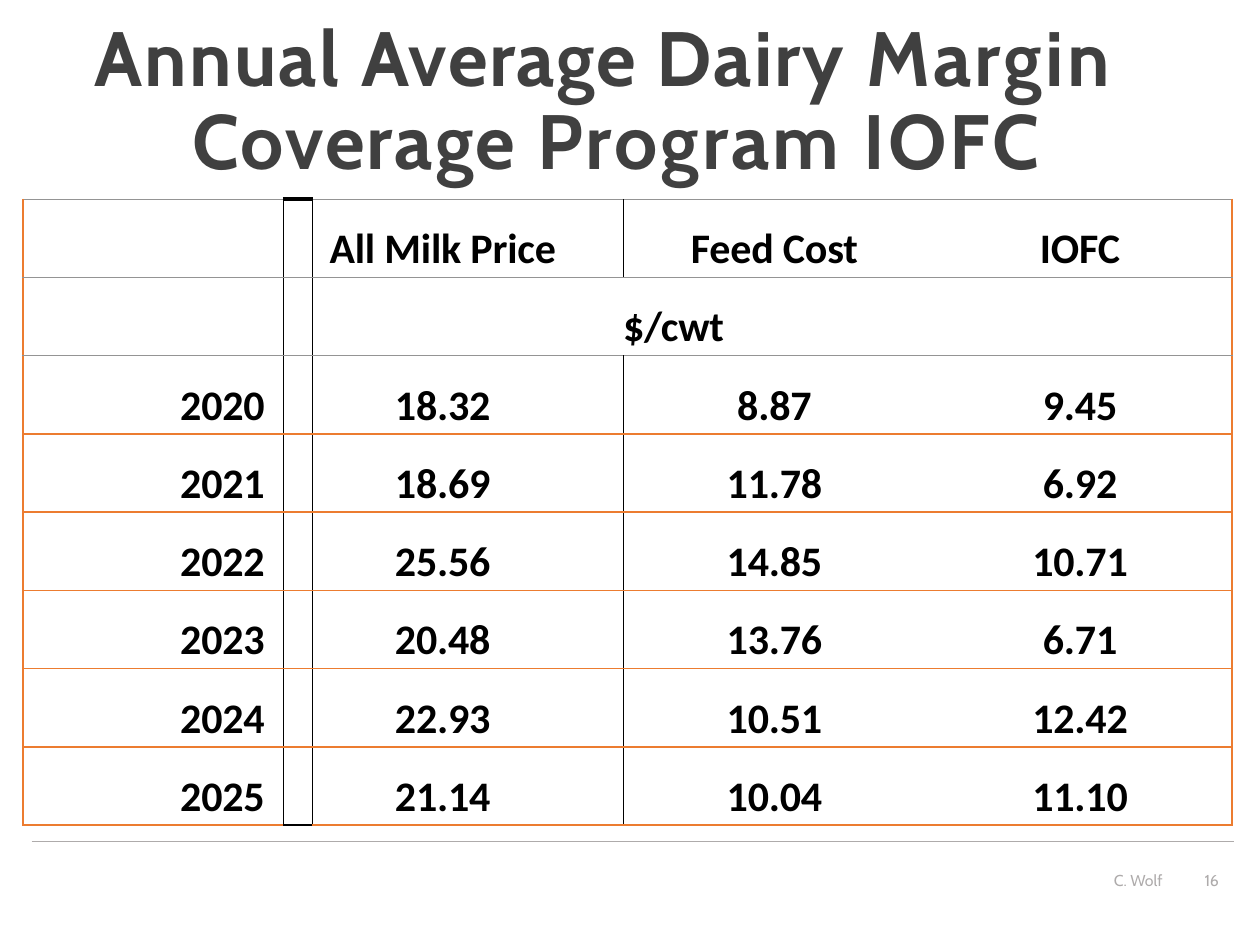
import pptx
import pptx.dml.color
import pptx.enum.shapes
import pptx.enum.text
import pptx.oxml
import pptx.oxml.ns
import pptx.util

Pt = pptx.util.Pt
ALIGN = pptx.enum.text.PP_ALIGN
COLORS = {"title": "404040", "footer": "AEABAB", "text": "000000",
          "orange": "EC7C30", "gray": "949494"}

# Each title word carries its own letter spacing, in points.
TITLE = [("Annual ", 1.3), ("Average ", 0.9), ("Dairy ", 1.2), ("Margin ", 1.9),
         ("Coverage ", 1.2), ("Program ", 1.8), ("IOFC", 1.6)]
UNIT = "$/cwt"
ROWS = [
    ("", "", "All Milk Price", "Feed Cost", "IOFC"),
    ("", "", UNIT, "", ""),
    ("2020", "", "18.32", "8.87", "9.45"),
    ("2021", "", "18.69", "11.78", "6.92"),
    ("2022", "", "25.56", "14.85", "10.71"),
    ("2023", "", "20.48", "13.76", "6.71"),
    ("2024", "", "22.93", "10.51", "12.42"),
    ("2025", "", "21.14", "10.04", "11.10"),
]
UNIT_ROW, SPACER, PRICE = 1, 1, 2
COLUMN_WIDTHS = [149.04, 16.56, 177.84, 184.32, 163.44]
RIGHT_MARGINS = [10.8, 0, 29, 12, 10.5]
UNIT_RIGHT_MARGIN = 113
ROW_HEIGHT = 44.73
FOOTERS = [("C. Wolf", 636.5, 40, 0), ("16", 688.3, 18, -0.2)]

TITLE_FONT = {"name": "Cabin", "size": Pt(44), "bold": True}
TABLE_FONT = {"name": "Calibri", "size": Pt(24), "bold": True}
FOOTER_FONT = {"name": "Cabin", "size": Pt(9), "bold": False}
NO_MARGINS = {"margin_left": 0, "margin_right": 0, "margin_top": 0, "margin_bottom": 0}


def set_values(target, values):
    for name, value in values.items():
        setattr(target, name, value)


def add_run(paragraph, text, font, color, spacing=0):
    """Add a run; spacing is the letter spacing in points."""
    run = paragraph.add_run()
    run.text = text
    set_values(run.font, font)
    run.font.color.rgb = pptx.dml.color.RGBColor.from_string(COLORS[color])
    if spacing:
        run.font._element.set("spc", str(round(spacing * 100)))


def add_title(slide):
    title = slide.shapes.title
    set_values(title, {"left": Pt(53.3), "top": Pt(3.6), "width": Pt(628.5), "height": Pt(102.2)})
    frame = title.text_frame
    set_values(frame, {**NO_MARGINS, "margin_top": Pt(7), "word_wrap": True,
                       "auto_size": pptx.enum.text.MSO_AUTO_SIZE.NONE,
                       "vertical_anchor": pptx.enum.text.MSO_ANCHOR.TOP})
    paragraph = frame.paragraphs[0]
    set_values(paragraph, {"alignment": ALIGN.LEFT, "line_spacing": Pt(47.5),
                           "space_before": Pt(0)})
    properties = paragraph._p.get_or_add_pPr()
    properties.set("marL", str(Pt(56.9)))
    properties.set("indent", str(Pt(-56.2)))
    for word, spacing in TITLE:
        add_run(paragraph, word, TITLE_FONT, "title", spacing)


def horizontal_rule(edge, column):
    """Return colour and width of the rule above row number edge."""
    if column == SPACER and edge == 0:
        return "text", 2.25
    if column == SPACER and edge == len(ROWS):
        return "text", 1
    return ("gray", 0.5) if edge <= UNIT_ROW + 1 else ("orange", 1)


def vertical_rule(edge, row):
    """Return colour and width of the rule left of column number edge, or None."""
    if edge in (0, len(COLUMN_WIDTHS)):
        return "orange", 1
    if edge in (SPACER, PRICE) or (edge == PRICE + 1 and row != UNIT_ROW):
        return "text", 1
    return None


def set_border(cell, side, rule):
    color, width = rule or (None, 0)
    fill = (f'<a:solidFill><a:srgbClr val="{COLORS[color]}"/></a:solidFill>'
            if color else "<a:noFill/>")
    cell._tc.get_or_add_tcPr().append(pptx.oxml.parse_xml(
        f'<a:ln{side} {pptx.oxml.ns.nsdecls("a")} w="{Pt(width)}">{fill}</a:ln{side}>'))


def add_table(slide):
    table = slide.shapes.add_table(
        len(ROWS), len(COLUMN_WIDTHS), Pt(13), Pt(113.8),
        Pt(sum(COLUMN_WIDTHS)), Pt(ROW_HEIGHT * len(ROWS))).table
    set_values(table, {"first_row": False, "horz_banding": False})
    for column, width in zip(table.columns, COLUMN_WIDTHS):
        column.width = Pt(width)
    for row in table.rows:
        row.height = Pt(ROW_HEIGHT)
    table.cell(UNIT_ROW, PRICE).merge(table.cell(UNIT_ROW, len(COLUMN_WIDTHS) - 1))

    for row, texts in enumerate(ROWS):
        for column, text in enumerate(texts):
            cell = table.cell(row, column)
            margin = UNIT_RIGHT_MARGIN if text == UNIT else RIGHT_MARGINS[column]
            set_values(cell, {**NO_MARGINS, "margin_top": Pt(14.1), "margin_right": Pt(margin)})
            right_edge = len(COLUMN_WIDTHS) if text == UNIT else column + 1
            for side, rule in (("L", vertical_rule(column, row)),
                               ("R", vertical_rule(right_edge, row)),
                               ("T", horizontal_rule(row, column)),
                               ("B", horizontal_rule(row + 1, column))):
                set_border(cell, side, rule)
            cell.fill.background()
            if text:
                paragraph = cell.text_frame.paragraphs[0]
                paragraph.alignment = ALIGN.RIGHT if column == 0 else ALIGN.CENTER
                add_run(paragraph, text, TABLE_FONT, "text", -0.1)


def add_footer(slide):
    line = slide.shapes.add_connector(pptx.enum.shapes.MSO_CONNECTOR.STRAIGHT,
                                      Pt(18), Pt(481), Pt(704.9), Pt(481))
    line.line.color.rgb = pptx.dml.color.RGBColor.from_string(COLORS["footer"])
    line.line.width = Pt(0.5)
    line._element.spPr.append(pptx.oxml.parse_xml(
        f'<a:effectLst {pptx.oxml.ns.nsdecls("a")}/>'))
    for text, left, width, spacing in FOOTERS:
        box = slide.shapes.add_textbox(Pt(left), Pt(497.8), Pt(width), Pt(12.2))
        set_values(box.text_frame, {**NO_MARGINS, "word_wrap": True})
        add_run(box.text_frame.paragraphs[0], text, FOOTER_FONT, "footer", spacing)


def main():
    presentation = pptx.Presentation()
    set_values(presentation, {"slide_width": Pt(720), "slide_height": Pt(540)})
    slide = presentation.slides.add_slide(presentation.slide_layouts[5])
    add_title(slide)
    add_table(slide)
    add_footer(slide)
    presentation.save("out.pptx")


if __name__ == "__main__":
    main()
